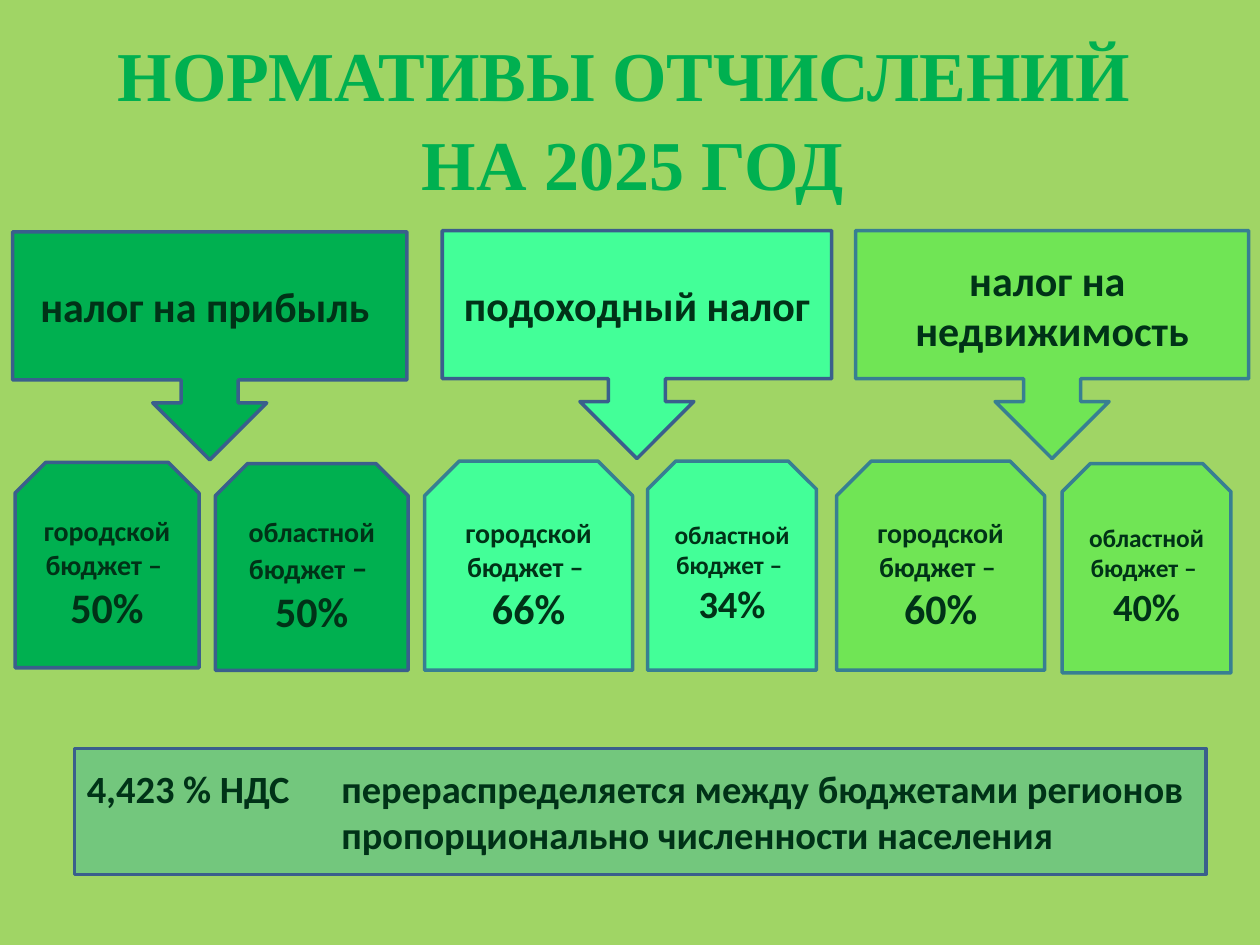
"""Build the slide on tax deduction rates for 2025."""
from pptx import Presentation
from pptx.dml.color import RGBColor as Rgb
from pptx.enum.shapes import MSO_SHAPE as Shape
from pptx.enum.text import MSO_ANCHOR as Anchor, PP_ALIGN as Align
from pptx.util import Inches, Pt

COLORS = {
    "page": "A0D565", "title": "00B050", "text": "003217",
    "profit": "00B050", "income": "43FF98", "property": "70E555",
    "vat": "73C77D", "navy": "3A5F8C", "teal": "377F92",
}
COLS, ROWS = 100, 75
CITY, REGION = "городской бюджет ", "областной бюджет "
TAXES = [
    ("profit", "налог на прибыль ", "navy", "navy", (1, 18.4, 31.3, 18.1), [
        (CITY, "50%", (16, 16, 24), (1.2, 36.7, 14.6, 16.3)),
        (REGION, "50%", (16, 18, 24), (17.1, 36.8, 15.3, 16.4))]),
    ("income", "подоходный налог", "navy", "teal", (35.1, 18.3, 30.9, 18.1), [
        (CITY, "66%", (16, 16, 24), (33.7, 36.6, 16.5, 16.6)),
        (REGION, "34%", (14.5, 14.5, 22), (51.4, 36.6, 13.4, 16.6))]),
    ("property", "налог на \nнедвижимость", "teal", "teal", (67.9, 18.3, 31.2, 18.1), [
        (CITY, "60%", (16, 16, 24), (66.4, 36.6, 16.5, 16.6)),
        (REGION, "40%", (14.5, 14.5, 22), (84.3, 36.8, 13.4, 16.6))]),
]


def rgb(name):
    """Return a named colour."""
    return Rgb.from_string(COLORS[name])


def place(prs, cell):
    """Turn grid columns and rows into left, top, width and height."""
    dx, dy = prs.slide_width / COLS, prs.slide_height / ROWS
    return [round(n * d) for n, d in zip(cell, (dx, dy, dx, dy))]


def write(p, text, size=24, font="Calibri", color="text", align=Align.CENTER):
    """Add a bold formatted run to a paragraph."""
    p.alignment = align
    r = p.add_run()
    r.text = text
    r.font.name, r.font.size, r.font.bold = font, Pt(size), True
    r.font.color.rgb = rgb(color)


def write_lines(tf, text, **fmt):
    """Write each line of text as its own paragraph."""
    for i, line in enumerate(text.split("\n")):
        write(tf.add_paragraph() if i else tf.paragraphs[0], line, **fmt)


def add_box(prs, s, kind, cell, fill, line):
    """Add a filled, outlined shape and return its text frame."""
    sp = s.shapes.add_shape(kind, *place(prs, cell))
    sp.shadow.inherit = False
    sp.fill.solid()
    sp.fill.fore_color.rgb = rgb(fill)
    sp.line.color.rgb = rgb(line)
    sp.line.width = Pt(2)
    tf = sp.text_frame
    tf.word_wrap = True
    tf.vertical_anchor = Anchor.MIDDLE
    return tf


def add_title(prs, s):
    """Move and format the title placeholder."""
    sp = s.shapes.title
    sp.left, sp.top, sp.width, sp.height = place(prs, (1.6, 1.7, 97.2, 12.5))
    tf = sp.text_frame
    tf.word_wrap = True
    tf.vertical_anchor = Anchor.TOP
    write_lines(tf, "НОРМАТИВЫ ОТЧИСЛЕНИЙ \nНА 2025 ГОД", size=40,
                font="Times New Roman", color="title")
    for p in tf.paragraphs:
        p.line_spacing = 1.05
        p.space_before = Pt(0)


def add_share(prs, s, budget, share, sizes, cell, fill, line):
    """Add a tag with the share that goes to one budget."""
    tf = add_box(prs, s, Shape.SNIP_2_SAME_RECTANGLE, cell, fill, line)
    name_size, dash_size, share_size = sizes
    p = tf.paragraphs[0]
    write(p, budget, size=name_size)
    write(p, "– ", size=dash_size)
    write(tf.add_paragraph(), share, size=share_size)


def add_vat(prs, s):
    """Add the VAT note with a hanging indent."""
    tf = add_box(prs, s, Shape.RECTANGLE, (5.9, 59.4, 89.8, 10), "vat", "navy")
    p = tf.paragraphs[0]
    write(p, "4,423 % НДС\tперераспределяется между бюджетами регионов "
             "пропорционально численности населения", size=22, align=Align.LEFT)
    pPr = p._p.get_or_add_pPr()
    pPr.set("marL", str(Inches(2.02)))
    pPr.set("indent", str(-Inches(2.02)))


def main():
    """Build and save the slide."""
    prs = Presentation()
    prs.slide_width, prs.slide_height = Inches(10), Inches(7.5)
    s = prs.slides.add_slide(prs.slide_layouts[5])
    s.background.fill.solid()
    s.background.fill.fore_color.rgb = rgb("page")
    add_title(prs, s)
    for fill, tax, line, tag_line, cell, shares in TAXES:
        tf = add_box(prs, s, Shape.DOWN_ARROW_CALLOUT, cell, fill, line)
        write_lines(tf, tax)
        for share in shares:
            add_share(prs, s, *share, fill, tag_line)
    add_vat(prs, s)
    prs.save("out.pptx")


if __name__ == "__main__":
    main()
